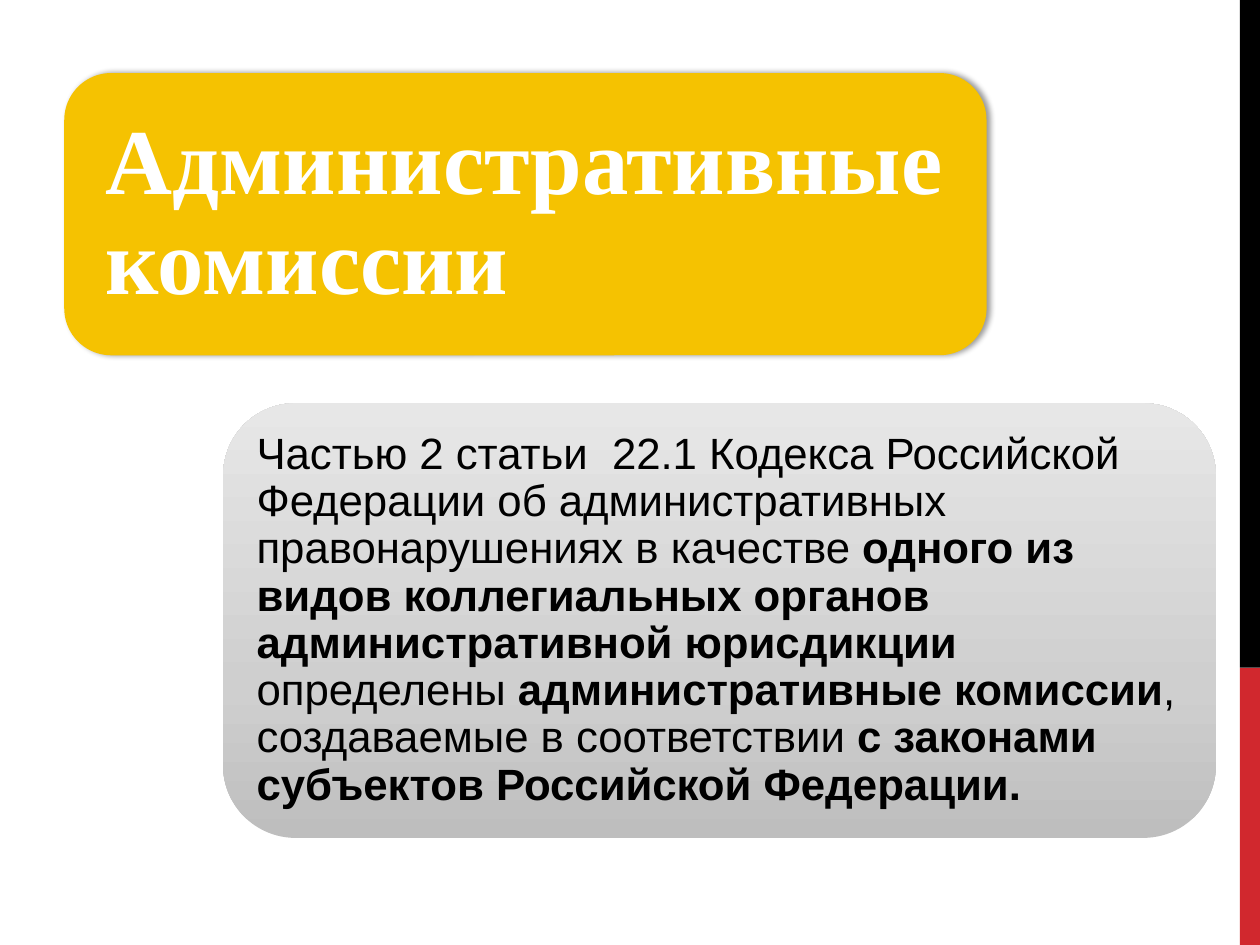
from dataclasses import dataclass

from lxml.etree import SubElement
from pptx import Presentation
from pptx.dml.color import RGBColor
from pptx.enum.shapes import MSO_SHAPE as Shape
from pptx.enum.text import MSO_ANCHOR as Anchor, PP_ALIGN as Align
from pptx.oxml.ns import qn
from pptx.util import Inches, Pt


@dataclass
class Panel:
    left: float
    top: float
    width: float
    height: float
    color: str
    kind: Shape = Shape.RECTANGLE


@dataclass
class Span:
    text: str
    bold: bool = False


@dataclass
class Style:
    font: str
    size: int
    color: str
    inset: float


def rgb(value: str) -> RGBColor:
    return RGBColor.from_string(value)


def add_panel(page, panel: Panel):
    box = page.shapes.add_shape(
        panel.kind,
        *map(Inches, (panel.left, panel.top, panel.width, panel.height)),
    )
    box.shadow.inherit = False
    box.line.fill.background()
    box.fill.solid()
    box.fill.fore_color.rgb = rgb(panel.color)
    return box


def add_color(parent, value: str):
    return SubElement(parent, qn("a:srgbClr"), val=value)


def set_gradient(box, stops: dict[int, str], angle: int) -> None:
    box.fill.gradient()
    gradient = box.element.spPr.find(qn("a:gradFill"))
    stop_list = gradient.find(qn("a:gsLst"))
    for stop in list(stop_list):
        stop_list.remove(stop)
    for position, color in stops.items():
        stop = SubElement(stop_list, qn("a:gs"), pos=str(position * 1000))
        add_color(stop, color)
    gradient.find(qn("a:lin")).set("ang", str(angle * 60000))


def set_shadow(box, color: str, opacity: int, blur: float, distance: float) -> None:
    effects = box.element.spPr.find(qn("a:effectLst"))
    shadow = SubElement(
        effects, qn("a:outerShdw"),
        blurRad=str(Pt(blur)), dist=str(Pt(distance)), dir="0",
    )
    SubElement(add_color(shadow, color), qn("a:alpha"), val=str(opacity * 1000))


def write_text(box, spans: list[Span], style: Style) -> None:
    frame = box.text_frame
    frame_format = {"word_wrap": True, "vertical_anchor": Anchor.MIDDLE}
    for side in ("left", "top", "right", "bottom"):
        frame_format[f"margin_{side}"] = Inches(style.inset)
    for name, value in frame_format.items():
        setattr(frame, name, value)
    para = frame.paragraphs[0]
    para.alignment = Align.LEFT
    para.line_spacing = 0.9
    for span in spans:
        run = para.add_run()
        run.text = span.text
        run_format = {"name": style.font, "size": Pt(style.size), "bold": span.bold}
        for name, value in run_format.items():
            setattr(run.font, name, value)
        run.font.color.rgb = rgb(style.color)


SIDE_BARS = [
    Panel(9.84, 5.3, 0.16, 2.2, "D1282E"),
    Panel(9.84, 0, 0.16, 5.3, "000000"),
]
TITLE_PANEL = Panel(0.51, 0.58, 7.32, 2.24, "F5C201", Shape.ROUNDED_RECTANGLE)
BODY_PANEL = Panel(1.77, 3.2, 7.88, 3.45, "CFCFCF", Shape.ROUNDED_RECTANGLE)
BODY_GRADIENT = {0: "BEBEBE", 35: "CFCFCF", 100: "E7E7E7"}
TITLE_STYLE = Style("Times New Roman", 53, "FFFFFF", 0.22)
BODY_STYLE = Style("Arial", 25, "000000", 0.1)
TITLE = [Span("Административные комиссии", True)]
BODY = [
    Span("Частью 2 статьи  22.1 Кодекса Российской Федерации об "
         "административных правонарушениях в качестве "),
    Span("одного из видов коллегиальных органов административной юрисдикции", True),
    Span(" определены "),
    Span("административные комиссии", True),
    Span(", создаваемые в соответствии "),
    Span("с законами субъектов Российской Федерации.", True),
]


def main() -> None:
    deck = Presentation()
    deck.slide_width, deck.slide_height = Inches(10), Inches(7.5)
    page = deck.slides.add_slide(deck.slide_layouts[6])

    for bar in SIDE_BARS:
        add_panel(page, bar)

    title_box = add_panel(page, TITLE_PANEL)
    set_shadow(title_box, "000000", opacity=40, blur=3.1, distance=1.8)
    write_text(title_box, TITLE, TITLE_STYLE)

    body_box = add_panel(page, BODY_PANEL)
    set_gradient(body_box, BODY_GRADIENT, angle=270)
    write_text(body_box, BODY, BODY_STYLE)

    deck.save("out.pptx")


if __name__ == "__main__":
    main()
